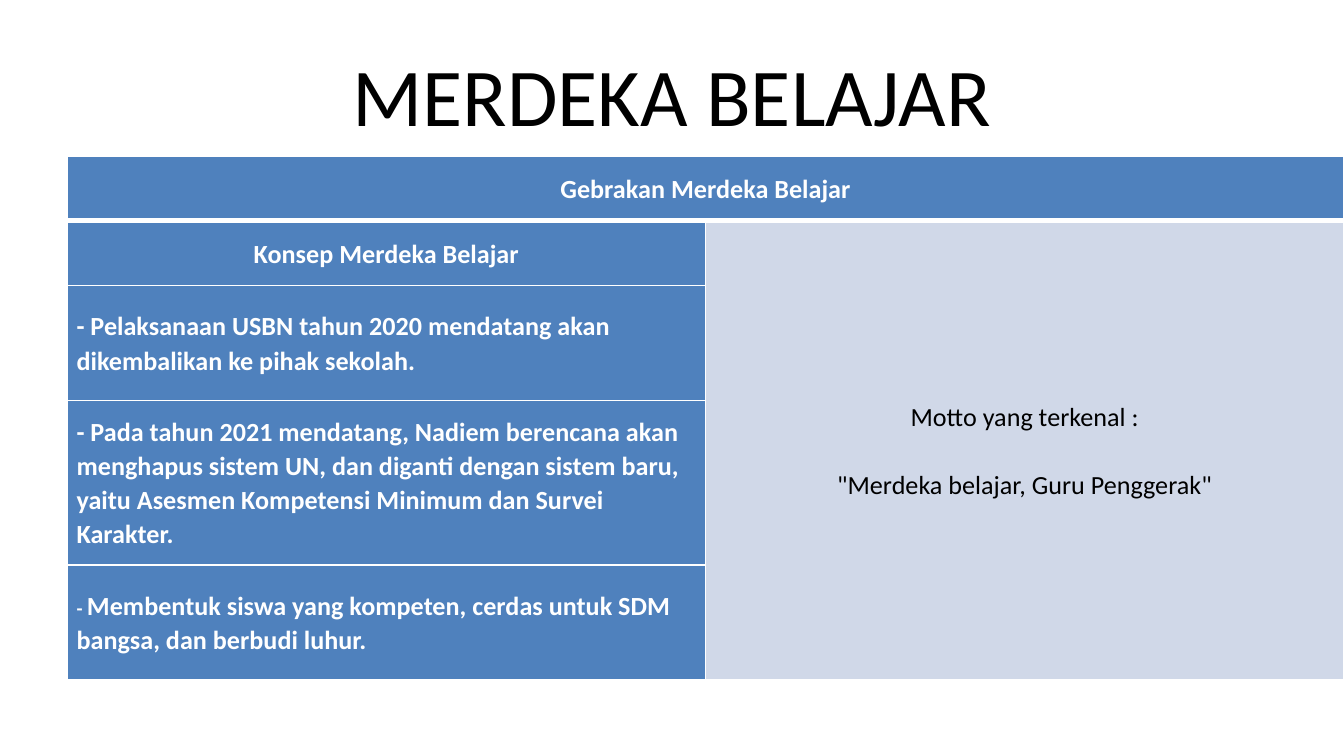
from pptx import Presentation
from pptx.dml.color import RGBColor
from pptx.enum.text import MSO_ANCHOR, PP_ALIGN
from pptx.oxml.ns import qn
from pptx.util import Inches, Pt
from lxml.etree import SubElement

BLACK = RGBColor(0x00, 0x00, 0x00)
WHITE = RGBColor(0xFF, 0xFF, 0xFF)
BLUE = RGBColor(0x4F, 0x81, 0xBD)
PALE = RGBColor(0xD0, 0xD8, 0xE8)

TABLE_HEIGHT = 3.9
ROW_SHARES = [0.48, 0.48, 0.85, 1.22, 0.85]
COLUMN_WIDTH = 4.75
CONCEPTS = [
    "Pelaksanaan USBN tahun 2020 mendatang akan dikembalikan ke pihak sekolah.",
    "Pada tahun 2021 mendatang, Nadiem berencana akan menghapus sistem UN, "
    "dan diganti dengan sistem baru, yaitu Asesmen Kompetensi Minimum dan "
    "Survei Karakter.",
    "Membentuk siswa yang kompeten, cerdas untuk SDM bangsa, dan berbudi luhur.",
]


def add_run(p, text, size=14, color=WHITE, bold=True):
    r = p.add_run()
    r.text = text
    r.font.name = "Calibri"
    r.font.size = Pt(size)
    r.font.bold = bold
    r.font.color.rgb = color


def format_paragraph(p, align=PP_ALIGN.LEFT, gap=0):
    p.alignment = align
    p.line_spacing = 1.07
    p.space_before = p.space_after = Pt(gap)
    return p


def set_borders(cell, top=1, bottom=1):
    tc_pr = cell._tc.get_or_add_tcPr()
    for side, width in (("L", 1), ("R", 1), ("T", top), ("B", bottom)):
        ln = SubElement(tc_pr, qn(f"a:ln{side}"), w=str(Pt(width)))
        fill = SubElement(ln, qn("a:solidFill"))
        SubElement(fill, qn("a:srgbClr"), val=str(WHITE))


def format_cell(cell, fill):
    cell.fill.solid()
    cell.fill.fore_color.rgb = fill
    cell.vertical_anchor = MSO_ANCHOR.MIDDLE
    cell.margin_left = cell.margin_right = Inches(0.07)
    cell.margin_top = cell.margin_bottom = Inches(0.03)


def add_title(s, text):
    title = s.shapes.title
    title.left, title.top = Inches(0.5), Inches(0.23)
    title.width, title.height = Inches(9), Inches(0.94)
    tf = title.text_frame
    tf.vertical_anchor = MSO_ANCHOR.MIDDLE
    p = tf.paragraphs[0]
    p.alignment = PP_ALIGN.CENTER
    add_run(p, text, size=44, color=BLACK, bold=False)


def add_grid(s):
    table = s.shapes.add_table(
        len(ROW_SHARES), 2, Inches(0.5), Inches(1.16),
        Inches(2 * COLUMN_WIDTH), Inches(TABLE_HEIGHT)).table
    for column in table.columns:
        column.width = Inches(COLUMN_WIDTH)
    for i, share in enumerate(ROW_SHARES):
        table.rows[i].height = Inches(TABLE_HEIGHT * share / sum(ROW_SHARES))
        for j in range(2):
            cell = table.cell(i, j)
            # A thick rule separates the heading from the body
            set_borders(cell, top=3 if i == 1 else 1, bottom=3 if i == 0 else 1)
            format_cell(cell, PALE if i and j else BLUE)
    table.cell(0, 0).merge(table.cell(0, 1))
    table.cell(1, 1).merge(table.cell(len(ROW_SHARES) - 1, 1))
    return table


def main():
    # Widescreen, 16:9
    prs = Presentation()
    prs.slide_width, prs.slide_height = Inches(10), Inches(10 * 9 / 16)
    s = prs.slides.add_slide(prs.slide_layouts[5])
    add_title(s, "MERDEKA BELAJAR")
    table = add_grid(s)

    # Headings
    for row, text in enumerate(["Gebrakan Merdeka Belajar", "Konsep Merdeka Belajar"]):
        p = table.cell(row, 0).text_frame.paragraphs[0]
        add_run(format_paragraph(p, PP_ALIGN.CENTER, 12), text)

    # Concepts, the last one with a smaller dash
    for row, text in enumerate(CONCEPTS, start=2):
        p = format_paragraph(table.cell(row, 0).text_frame.paragraphs[0])
        if text == CONCEPTS[-1]:
            add_run(p, "- ", size=10.5)
            add_run(p, text)
        else:
            add_run(p, "- " + text)

    # Motto
    tf = table.cell(1, 1).text_frame
    motto = [(tf.paragraphs[0], "Motto yang terkenal :", 12),
             (tf.add_paragraph(), '"Merdeka belajar, Guru Penggerak"', 6)]
    for p, text, gap in motto:
        add_run(format_paragraph(p, PP_ALIGN.CENTER, gap), text, color=BLACK, bold=False)

    prs.save("out.pptx")


if __name__ == "__main__":
    main()
